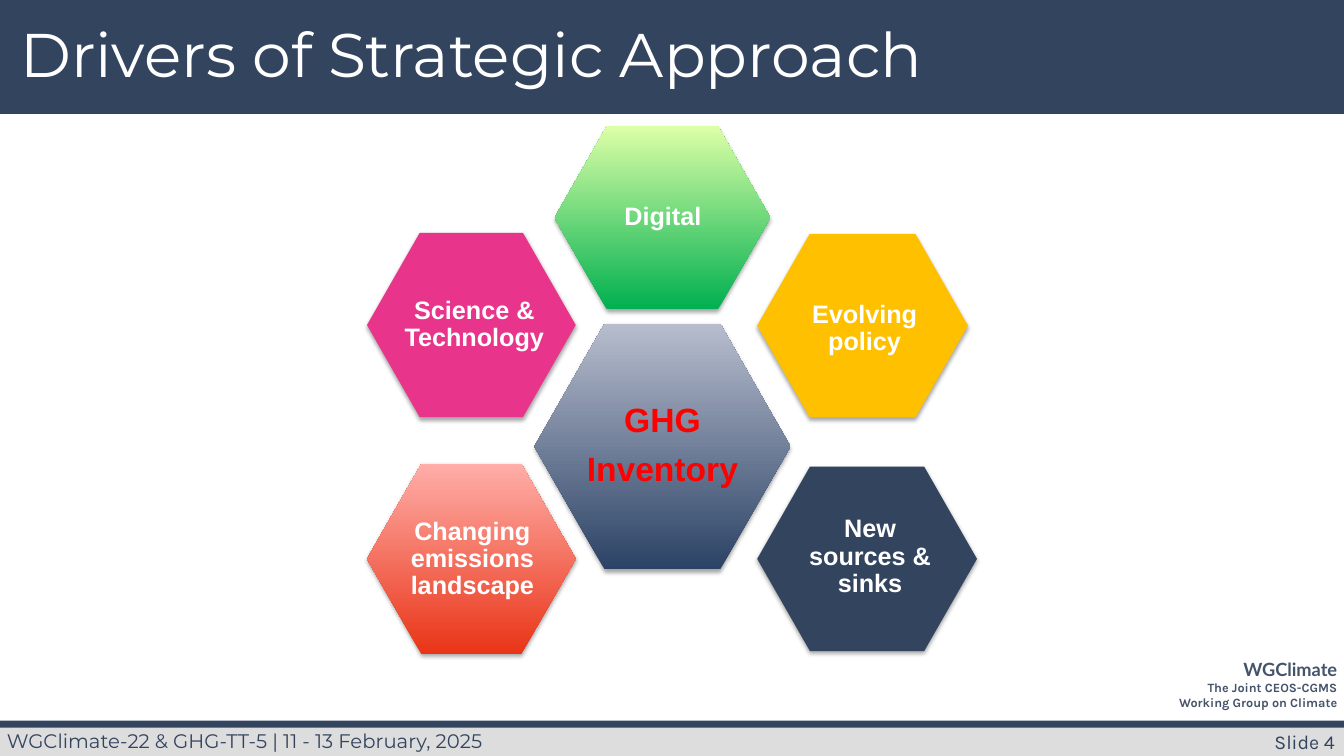
from dataclasses import dataclass

from lxml.etree import SubElement
from pptx import Presentation
from pptx.dml.color import RGBColor as Rgb
from pptx.enum.shapes import MSO_SHAPE as Shape
from pptx.enum.text import MSO_ANCHOR as Anchor, MSO_AUTO_SIZE as Fit, PP_ALIGN as Align
from pptx.oxml.ns import qn
from pptx.util import Inches, Pt

HUES = {
    "navy": "33445F", "grey": "DDDDDD", "slate": "44546A", "white": "FFFFFF",
    "red": "FF0000", "gold": "FFC000", "pink": "E8348B",
    "steel": "2C4366", "mist": "B7BDCD",
    "green": "00B050", "lime": "DDFFA7",
    "flame": "E93517", "blush": "FFAEA9",
}

Box = tuple[float, float, float, float]


@dataclass
class Line:
    text: str
    size: float
    font: str
    hue: str
    bold: bool = False


@dataclass
class Label:
    box: Box
    lines: list[Line]
    align: Align
    pad: float = 0.05


@dataclass
class Driver:
    hexa: Box
    area: Box
    hues: list[str]
    lines: list[str]
    size: float = 18
    ink: str = "white"


BANDS = [
    ((0, 0, 13.33, 1.13), "navy"),
    ((0, 7.19, 13.33, 0.31), "grey"),
    ((0, 7.15, 13.33, 0.07), "navy"),
]

LABELS = [
    Label((11.23, 7.19, 2.11, 0.34),
          [Line("Slide 4", 14, "Karla", "navy")], Align.RIGHT),
    Label((-0.03, 7.18, 6.43, 0.34),
          [Line("WGClimate-22 & GHG-TT-5 | 11 - 13 February, 2025", 14, "Montserrat", "navy")],
          Align.LEFT),
    Label((11.54, 6.43, 1.82, 0.72),
          [Line("WGClimate", 13, "Lato", "slate", True),
           Line("The Joint CEOS-CGMS Working Group on Climate", 9, "Karla", "slate", True)],
          Align.RIGHT, 0.1),
]

DRIVERS = [
    Driver((5.3, 3.21, 2.54, 2.44), (5.72, 3.61, 1.7, 1.63),
           ["steel", "mist"], ["GHG", "Inventory"], 24, "red"),
    Driver((5.5, 1.25, 2.14, 1.82), (5.86, 1.55, 1.43, 1.22),
           ["green", "lime"], ["Digital"]),
    Driver((7.51, 2.32, 2.09, 1.82), (7.93, 2.68, 1.29, 1.17),
           ["gold"], ["Evolving policy"]),
    Driver((7.51, 4.63, 2.18, 1.83), (7.93, 4.94, 1.4, 1.17),
           ["navy"], ["New sources & sinks"]),
    Driver((3.64, 4.6, 2.07, 1.89), (3.99, 4.92, 1.39, 1.26),
           ["flame", "blush"], ["Changing emissions landscape"]),
    Driver((3.64, 2.31, 2.07, 1.83), (3.99, 2.76, 1.43, 0.93),
           ["pink"], ["Science & Technology"]),
]


def tint(name: str) -> Rgb:
    return Rgb.from_string(HUES[name])


def place(box: Box) -> list[int]:
    return [Inches(n) for n in box]


def paint(shape, hues: list[str]) -> None:
    fill = shape.fill
    if len(hues) == 1:
        fill.solid()
        fill.fore_color.rgb = tint(hues[0])
        return
    fill.gradient()
    fill.gradient_angle = 90
    for pos, (stop, hue) in enumerate(zip(fill.gradient_stops, hues)):
        stop.position = pos
        stop.color.rgb = tint(hue)


def draw(shapes, kind: Shape, box: Box, hues: list[str]):
    shape = shapes.add_shape(kind, *place(box))
    shape.shadow.inherit = False
    shape.line.fill.background()
    paint(shape, hues)
    return shape


def shade(shape) -> None:
    glow = shape._element.spPr.find(qn("a:effectLst"))
    cast = SubElement(glow, qn("a:outerShdw"), blurRad=str(Pt(3.1)), dist=str(Pt(1.8)),
                      dir="5400000", rotWithShape="0")
    tone = SubElement(cast, qn("a:srgbClr"), val="000000")
    SubElement(tone, qn("a:alpha"), val="35000")


def write(shape, lines: list[Line], align: Align, anchor: Anchor,
          side: float, pad: float, lead: float = 1, gap: float = 0) -> None:
    frame = shape.text_frame
    frame.word_wrap = True
    frame.auto_size = Fit.NONE
    frame.vertical_anchor = anchor
    frame.margin_left = frame.margin_right = Inches(side)
    frame.margin_top = frame.margin_bottom = Inches(pad)
    for i, line in enumerate(lines):
        para = frame.add_paragraph() if i else frame.paragraphs[0]
        para.alignment = align
        para.line_spacing = lead
        para.space_before = Pt(0)
        para.space_after = Pt(gap)
        run = para.add_run()
        run.text = line.text
        font = run.font
        font.name = line.font
        font.size = Pt(line.size)
        font.bold = line.bold
        font.color.rgb = tint(line.hue)


def add_driver(shapes, item: Driver) -> None:
    group = shapes.add_group_shape().shapes
    hexa = draw(group, Shape.HEXAGON, item.hexa, item.hues)
    hexa.adjustments[0] = 0.286
    shade(hexa)
    area = group.add_textbox(*place(item.area))
    if len(item.hues) == 1:
        paint(area, item.hues)
    lines = [Line(text, item.size, "Arial", item.ink, True) for text in item.lines]
    write(area, lines, Align.CENTER, Anchor.MIDDLE, 0.02, 0.02, 0.9, round(item.size * 0.38))


def main() -> None:
    deck = Presentation()
    deck.slide_width, deck.slide_height = Inches(13.33), Inches(7.5)
    slide = deck.slides.add_slide(deck.slide_layouts[5])
    shapes = slide.shapes
    for box, hue in BANDS:
        draw(shapes, Shape.RECTANGLE, box, [hue])
    for label in LABELS:
        write(shapes.add_textbox(*place(label.box)), label.lines, label.align,
              Anchor.TOP, 0.1, label.pad)
    title = shapes.title
    title.left, title.top, title.width, title.height = place((0.1, 0.11, 9.48, 0.84))
    write(title, [Line("Drivers of Strategic Approach", 44, "Montserrat", "white")],
          Align.LEFT, Anchor.TOP, 0.1, 0.05)
    shapes._spTree.append(title._element)
    for item in DRIVERS:
        add_driver(shapes, item)
    deck.save("out.pptx")


if __name__ == "__main__":
    main()
